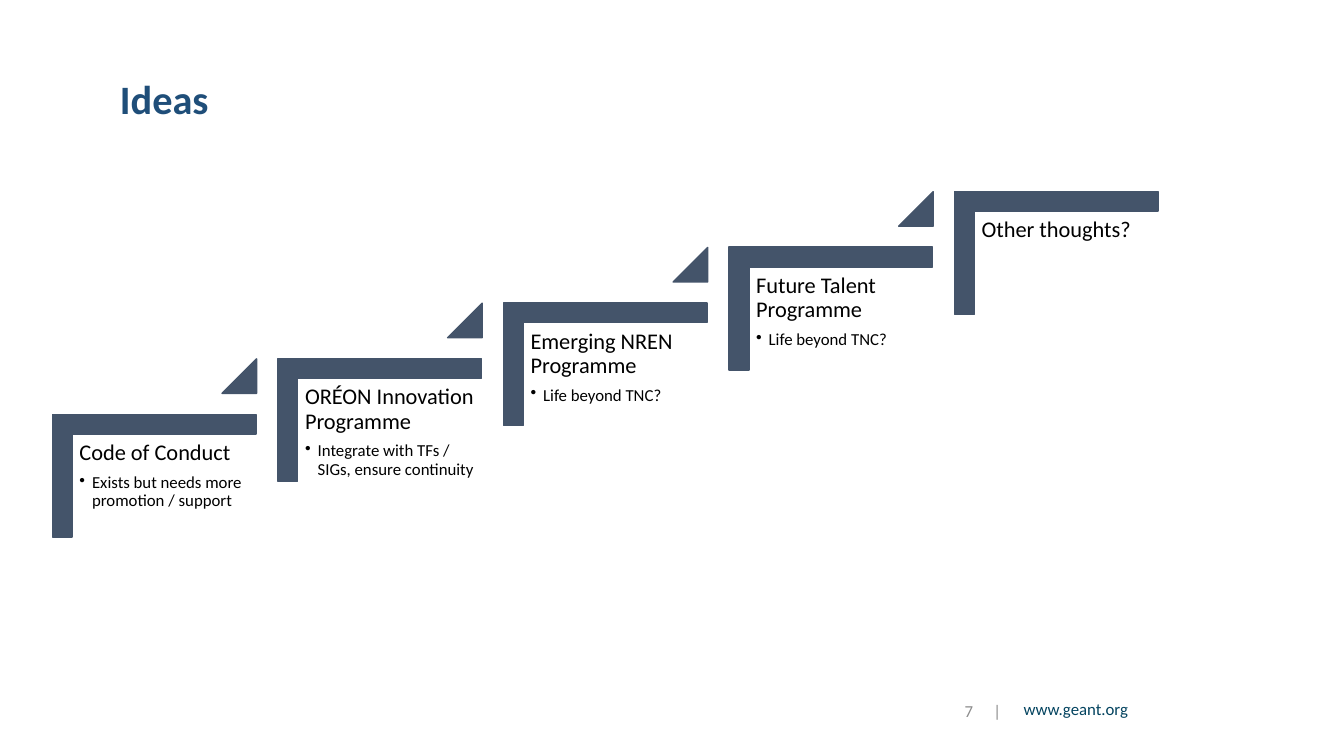
from lxml.etree import SubElement
from pptx import Presentation
from pptx.dml.color import RGBColor
from pptx.enum.shapes import MSO_SHAPE
from pptx.enum.text import MSO_ANCHOR, PP_ALIGN
from pptx.oxml.ns import qn
from pptx.util import Pt

COLORS = {
    "title": "1F4E79",
    "step": "44546A",
    "text": "000000",
    "number": "8C8C8C",
    "link": "03435F",
}
FONT = "Calibri"
STEP_X, STEP_Y = 161.1, -39.8
IDEAS = [
    ("Code of Conduct", "Exists but needs more promotion / support"),
    ("ORÉON Innovation Programme", "Integrate with TFs / SIGs, ensure continuity"),
    ("Emerging NREN Programme", "Life beyond TNC?"),
    ("Future Talent Programme", "Life beyond TNC?"),
    ("Other thoughts?", None),
]


def format_text(p, size, color, bold=False):
    for r in p.runs:
        r.font.name = FONT
        r.font.size = Pt(size)
        r.font.bold = bold
        r.font.color.rgb = RGBColor.from_string(COLORS[color])


def add_text_box(slide, left, top, width, height, inset=(7.2, 3.6, 7.2, 3.6)):
    """Add a wrapping box; inset is left, top, right, bottom."""
    tf = slide.shapes.add_textbox(Pt(left), Pt(top), Pt(width), Pt(height)).text_frame
    tf.word_wrap = True
    tf.margin_left, tf.margin_top, tf.margin_right, tf.margin_bottom = map(Pt, inset)
    return tf


def add_step_shape(slide, kind, left, top, width, height, adjustments):
    sp = slide.shapes.add_shape(kind, Pt(left), Pt(top), Pt(width), Pt(height))
    for i, value in enumerate(adjustments):
        sp.adjustments[i] = value
    sp.shadow.inherit = False
    sp.fill.solid()
    sp.fill.fore_color.rgb = RGBColor.from_string(COLORS["step"])
    sp.line.color.rgb = RGBColor.from_string(COLORS["step"])
    sp.line.width = Pt(1)
    return sp


def add_bullet(p, indent):
    pPr = p._p.get_or_add_pPr()
    pPr.set("marL", str(Pt(indent)))
    pPr.set("indent", str(-Pt(indent)))
    SubElement(pPr, qn("a:buChar"), char="•")


def add_tab_stop(p, position):
    tabs = SubElement(p._p.get_or_add_pPr(), qn("a:tabLst"))
    SubElement(tabs, qn("a:tab"), pos=str(Pt(position)), algn="l")


def add_title(slide, text):
    title = slide.shapes.title
    title.left, title.top, title.width, title.height = Pt(78.5), Pt(55.4), Pt(779), Pt(33.8)
    tf = title.text_frame
    tf.text = text
    tf.vertical_anchor = MSO_ANCHOR.MIDDLE
    p = tf.paragraphs[0]
    p.alignment = PP_ALIGN.LEFT
    p.line_spacing = 0.9
    format_text(p, 28.8, "title", bold=True)


def add_idea(slide, index, heading, detail):
    dx, dy = index * STEP_X, index * STEP_Y
    corner = add_step_shape(slide, MSO_SHAPE.CORNER, 66.2 + dx, 267.1 + dy,
                            87.8, 145.4, [0.161, 0.161])
    corner.rotation = 90

    tf = add_text_box(slide, 51.8 + dx, 310.3 + dy, 131.8, 115.2, (5, 5, 5, 5))
    p = tf.paragraphs[0]
    p.text = heading
    p.line_spacing = 0.9
    p.space_after = Pt(6)
    format_text(p, 16, "text")
    if detail:
        p = tf.add_paragraph()
        p.text = detail
        p.level = 1
        p.line_spacing = 0.9
        add_bullet(p, 9)
        format_text(p, 12, "text")

    if index < len(IDEAS) - 1:
        add_step_shape(slide, MSO_SHAPE.ISOSCELES_TRIANGLE, 158.6 + dx, 256.3 + dy,
                       24.7, 24.7, [1])


def add_footer(slide):
    tf = add_text_box(slide, 691.9, 497.5, 121, 26.6)
    p = tf.paragraphs[0]
    p.text = "www.geant.org"
    p.alignment = PP_ALIGN.RIGHT
    p.line_spacing = 0.9
    format_text(p, 12, "link")

    tf = add_text_box(slide, 668.9, 494.6, 52.6, 25.9, (20.2, 3.6, 0, 3.6))
    tf.vertical_anchor = MSO_ANCHOR.MIDDLE
    p = tf.paragraphs[0]
    p.text = "7\t|"
    add_tab_stop(p, 20.5)
    format_text(p, 12, "number")


def main():
    prs = Presentation()
    prs.slide_width, prs.slide_height = Pt(960), Pt(540)
    slide = prs.slides.add_slide(prs.slide_layouts[5])
    add_title(slide, "Ideas")
    for index, (heading, detail) in enumerate(IDEAS):
        add_idea(slide, index, heading, detail)
    add_footer(slide)
    prs.save("out.pptx")


if __name__ == "__main__":
    main()
